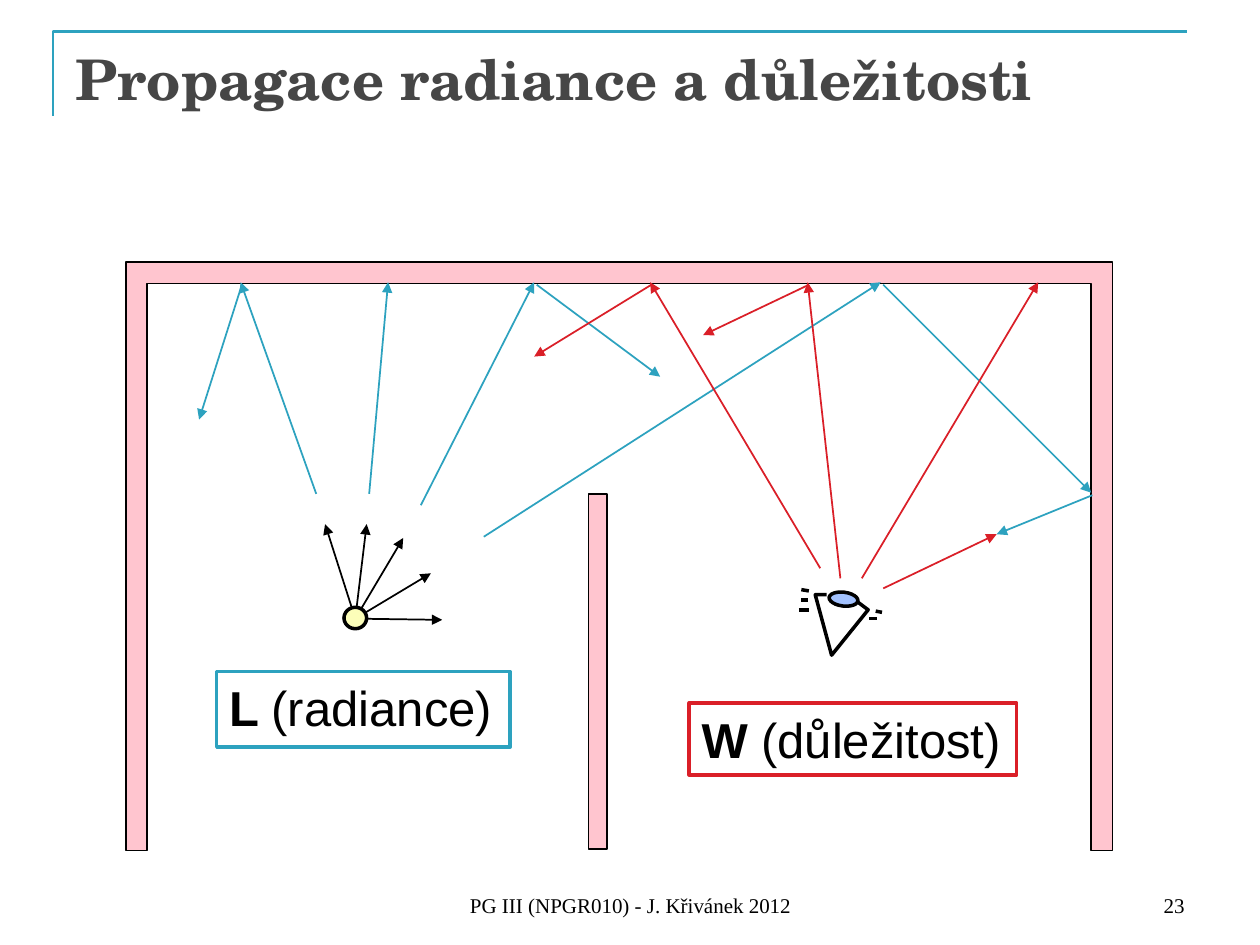
from lxml.etree import SubElement
from pptx import Presentation
from pptx.dml.color import RGBColor
from pptx.enum.shapes import MSO_CONNECTOR, MSO_SHAPE
from pptx.enum.text import MSO_ANCHOR, PP_ALIGN
from pptx.oxml.ns import qn
from pptx.util import Inches, Pt

INK = {"teal": "2DA2BF", "red": "DA1F28", "title": "464646", "black": "000000",
       "wall": "FFC5CF", "lamp": "FCFEB9", "lens": "A2C1FE"}


def color(name):
    return RGBColor.from_string(INK[name])


def style(shape, line, width, fill=None):
    shape.shadow.inherit = False
    shape.line.color.rgb = color(line)
    shape.line.width = Pt(width)
    if fill:
        shape.fill.solid()
        shape.fill.fore_color.rgb = color(fill)
    else:
        shape.fill.background()


def block(slide, kind, box, line, width, fill=None):
    shape = slide.shapes.add_shape(kind, *[Inches(v) for v in box])
    style(shape, line, width, fill)
    return shape


def outline(slide, box, points, line, width, fill=None):
    left, top = box[:2]
    spots = [(Inches(left + x), Inches(top + y)) for x, y in points]
    build = slide.shapes.build_freeform(*spots[0])
    build.add_line_segments(spots[1:], close=fill is not None)
    style(build.convert_to_shape(), line, width, fill)


def stroke(slide, box, ends, ink, width=1, arrow=True):
    left, top = box[:2]
    x1, y1, x2, y2 = ends
    line = slide.shapes.add_connector(
        MSO_CONNECTOR.STRAIGHT, Inches(left + x1), Inches(top + y1),
        Inches(left + x2), Inches(top + y2))
    line.line.color.rgb = color(ink)
    line.line.width = Pt(width)
    props = line._element.spPr
    if arrow:
        SubElement(props.find(qn("a:ln")), qn("a:tailEnd"), type="triangle")
    SubElement(props, qn("a:effectLst"))


def font(run, face, size, ink="black", bold=False):
    run.font.name = face
    run.font.size = Pt(size)
    run.font.color.rgb = color(ink)
    run.font.bold = bold


def words(slide, box, text, face, size, ink="black", bold=False,
          align=PP_ALIGN.LEFT, anchor=MSO_ANCHOR.TOP):
    frame = slide.shapes.add_textbox(*[Inches(v) for v in box]).text_frame
    frame.word_wrap = True
    frame.vertical_anchor = anchor
    frame.text = text
    para = frame.paragraphs[0]
    para.alignment = align
    font(para.runs[0], face, size, ink, bold)


def header(slide, box):
    left, top, wide, high = box
    outline(slide, box, [(0, high), (0, 0), (wide, 0)], "teal", 1.5)
    words(slide, (left + 0.08, top + 0.05, wide, 1.25),
          "Propagace radiance a důležitosti", "TeX Gyre Schola", 32, "title", True)


def footer(slide, box):
    left, top, wide, high = box
    parts = [(0, 3.17, "PG III (NPGR010) - J. Křivánek 2012", PP_ALIGN.CENTER),
             (wide - 2.33, 2.33, "23", PP_ALIGN.RIGHT)]
    for x, size, text, align in parts:
        words(slide, (left + x, top, size, high), text, "Times New Roman", 12,
              align=align, anchor=MSO_ANCHOR.BOTTOM)


def eye(slide, box):
    left, top = box
    lens = block(slide, MSO_SHAPE.OVAL, (left + 0.3, top, 0.11, 0.23), "black", 2, "lens")
    lens.rotation = 277
    outline(slide, box, [(0.22, 0.08), (0.13, 0.08), (0.26, 0.56), (0.55, 0.2),
                         (0.47, 0.14)], "black", 2)
    lashes = [(0.02, 0.04, 0.08, 0.05), (0.02, 0.12, 0.07, 0.12), (0, 0.2, 0.08, 0.2),
              (0.61, 0.21, 0.66, 0.22), (0.56, 0.27, 0.62, 0.27)]
    for ends in lashes:
        stroke(slide, box, ends, "black", 2, arrow=False)


def lamp(slide, box):
    left, top = box
    x, y = 0.24, 0.75
    for tip in [(0.93, 0.76), (0, 0), (0.84, 0.39), (0.62, 0.11), (0.33, 0)]:
        stroke(slide, box, (x, y, *tip), "black")
    block(slide, MSO_SHAPE.OVAL, (left + x - 0.09, top + y - 0.09, 0.18, 0.17),
          "black", 2, "lamp")


def room(slide, box):
    left, top, wide, high = box
    thick = 0.17
    # Middle partition, then the ceiling with both side walls
    block(slide, MSO_SHAPE.RECTANGLE, (left + 3.67, top + 1.84, 0.15, 2.82),
          "black", 1, "wall")
    inner = wide - thick
    outline(slide, box, [(thick, high), (0, high), (0, 0), (wide, 0), (wide, high),
                         (inner, high), (inner, thick), (thick, thick)],
            "black", 1, "wall")


def rays(slide, box):
    paths = {
        "teal": [(2.34, 1.93, 3.24, 0.16), (1.93, 1.84, 2.08, 0.16),
                 (2.84, 2.18, 5.99, 0.16), (1.51, 1.84, 0.91, 0.16),
                 (3.26, 0.18, 4.24, 0.91), (6.01, 0.18, 7.66, 1.83),
                 (0.92, 0.18, 0.58, 1.25), (7.67, 1.85, 6.91, 2.16)],
        "red": [(5.84, 2.51, 7.24, 0.16), (5.67, 2.51, 5.41, 0.16),
                (6.01, 2.59, 6.91, 2.16), (5.42, 0.18, 4.58, 0.58),
                (5.51, 2.43, 4.16, 0.16), (4.17, 0.18, 3.24, 0.75)]}
    for ink, group in paths.items():
        for ends in group:
            stroke(slide, box, ends, ink)


def label(slide, box, sign, name, ink):
    frame = block(slide, MSO_SHAPE.RECTANGLE, box, ink, 2).text_frame
    frame.word_wrap = False
    frame.vertical_anchor = MSO_ANCHOR.TOP
    para = frame.paragraphs[0]
    para.alignment = PP_ALIGN.LEFT
    for text, bold in [(sign + " ", True), (f"({name})", False)]:
        run = para.add_run()
        run.text = text
        font(run, "Arial", 28, bold=bold)


def main():
    deck = Presentation()
    deck.slide_width, deck.slide_height = Inches(10), Inches(7.5)
    slide = deck.slides.add_slide(deck.slide_layouts[6])
    space = (1, 2.08, 7.83, 4.67)
    header(slide, (0.42, 0.25, 9, 0.67))
    footer(slide, (3.42, 6.83, 6.08, 0.5))
    eye(slide, (6.34, 4.64))
    lamp(slide, (2.58, 4.16))
    room(slide, space)
    rays(slide, space)
    label(slide, (1.72, 5.33, 2.33, 0.6), "L", "radiance", "teal")
    label(slide, (5.47, 5.58, 2.6, 0.57), "W", "důležitost", "red")
    deck.save("out.pptx")


if __name__ == "__main__":
    main()
